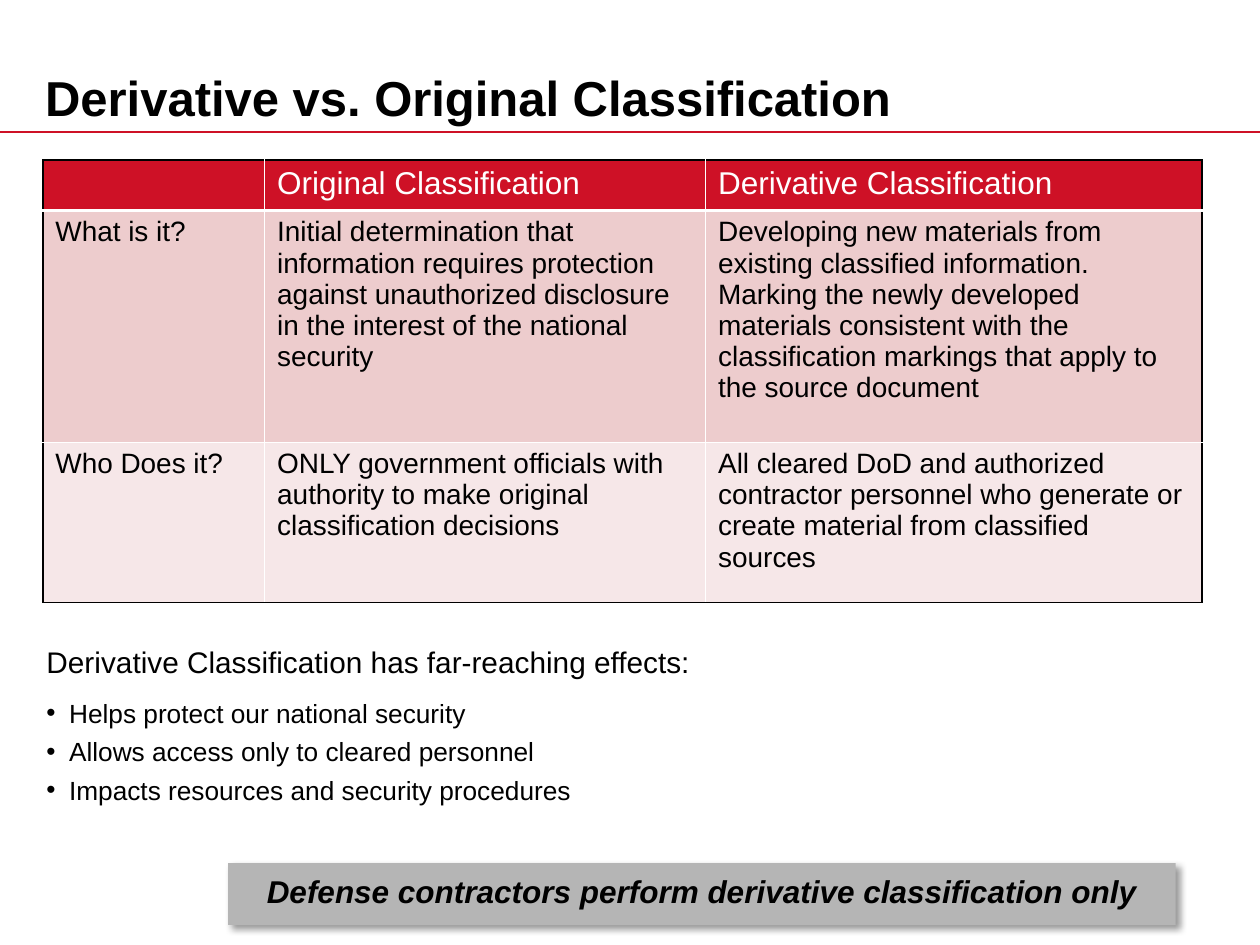
from lxml import etree
from pptx import Presentation
from pptx.dml.color import RGBColor
from pptx.enum.shapes import MSO_CONNECTOR, MSO_SHAPE
from pptx.enum.text import MSO_ANCHOR, PP_ALIGN
from pptx.oxml.ns import qn
from pptx.util import Emu, Inches, Pt

RED, PINK, PALE = "CE1126", "EDCCCD", "F6E7E8"
BLACK, WHITE, GRAY = "000000", "FFFFFF", "B5B5B5"

COLS = (1.76, 3.5, 3.94)
ROWS = (  # height, fill, text size, text colour, cells
    (0.35, RED, 18, WHITE,
     ("", "Original Classification", "Derivative Classification")),
    (1.84, PINK, 16, BLACK,
     ("What is it?",
      "Initial determination that information requires protection against "
      "unauthorized disclosure in the interest of the national security",
      "Developing new materials from existing classified information. "
      "Marking the newly developed materials consistent with the "
      "classification markings that apply to the source document")),
    (1.27, PALE, 16, BLACK,
     ("Who Does it?",
      "ONLY government officials with authority to make original "
      "classification decisions",
      "All cleared DoD and authorized contractor personnel who generate or "
      "create material from classified sources")),
)
EFFECTS = (
    "Helps protect our national security",
    "Allows access only to cleared personnel",
    "Impacts resources and security procedures",
)


def rgb(color):
    return RGBColor.from_string(color)


def box(*lengths):
    return [Inches(n) for n in lengths]


def add_xml(parent, tag, **attrs):
    return etree.SubElement(parent, qn(tag), {k: str(v) for k, v in attrs.items()})


def style(p, size, color=BLACK, bold=False, italic=False):
    f = p.font
    f.name, f.size, f.bold, f.italic = "Arial", Pt(size), bold, italic
    f.color.rgb = rgb(color)


def add_text(s, at, text, size, bold=False, anchor=MSO_ANCHOR.TOP):
    tf = s.shapes.add_textbox(*box(*at)).text_frame
    tf.word_wrap = True
    tf.vertical_anchor = anchor
    p = tf.paragraphs[0]
    p.text = text
    style(p, size, bold=bold)
    return tf


def add_rule(s, width, y):
    line = s.shapes.add_connector(MSO_CONNECTOR.STRAIGHT, 0, Inches(y), width, Inches(y))
    line.line.color.rgb = rgb(RED)
    line.line.width = Pt(1)
    add_xml(line._element.spPr, "a:effectLst")


def add_border(cell, side, color, width):
    ln = add_xml(cell._tc.get_or_add_tcPr(), f"a:ln{side}", w=Pt(width))
    add_xml(add_xml(ln, "a:solidFill"), "a:srgbClr", val=color)


def add_comparison(s, left, top):
    """Table with a black outer frame and white inner lines."""
    height = sum(row[0] for row in ROWS)
    table = s.shapes.add_table(len(ROWS), len(COLS),
                               *box(left, top, sum(COLS), height)).table
    last_row, last_col = len(ROWS) - 1, len(COLS) - 1
    for col, width in zip(table.columns, COLS):
        col.width = Inches(width)
    for i, (height, fill, size, color, texts) in enumerate(ROWS):
        table.rows[i].height = Inches(height)
        for j, text in enumerate(texts):
            cell = table.cell(i, j)
            outer = {"L": j == 0, "R": j == last_col, "T": i == 0, "B": i == last_row}
            for side, is_outer in outer.items():
                thick = (i, side) in ((0, "B"), (1, "T"))
                add_border(cell, side, BLACK if is_outer else WHITE, 2 if thick else 1)
            cell.fill.solid()
            cell.fill.fore_color.rgb = rgb(fill)
            p = cell.text_frame.paragraphs[0]
            p.text = text
            style(p, size, color)


def add_bullet(tf, text, size, before=0):
    p = tf.add_paragraph()
    p.text = text
    pPr = p._p.get_or_add_pPr()
    pPr.set("marL", str(Inches(0.18)))
    pPr.set("indent", str(-Inches(0.18)))
    add_xml(pPr, "a:buFont", typeface="Arial")
    add_xml(pPr, "a:buChar", char="•")
    p.line_spacing = Pt(22)
    p.space_before = Pt(before)
    style(p, size)


def add_banner(s, at, text):
    sp = s.shapes.add_shape(MSO_SHAPE.RECTANGLE, *box(*at))
    sp.shadow.inherit = False
    sp.fill.solid()
    sp.fill.fore_color.rgb = rgb(GRAY)
    sp.line.fill.background()
    effects = sp._element.spPr.find(qn("a:effectLst"))
    shadow = add_xml(effects, "a:outerShdw", blurRad=Pt(4), dist=Pt(3),
                     dir=45 * 60000, algn="tl", rotWithShape=0)
    add_xml(add_xml(shadow, "a:srgbClr", val=BLACK), "a:alpha", val=40000)
    tf = sp.text_frame
    tf.word_wrap = True
    tf.margin_left = tf.margin_right = tf.margin_top = Emu(0)
    tf.margin_bottom = Inches(0.05)
    tf.vertical_anchor = MSO_ANCHOR.MIDDLE
    p = tf.paragraphs[0]
    p.text = text
    p.alignment = PP_ALIGN.CENTER
    style(p, 18, bold=True, italic=True)


def main():
    prs = Presentation()
    prs.slide_width, prs.slide_height = box(10, 7.5)
    s = prs.slides.add_slide(prs.slide_layouts[6])
    add_rule(s, prs.slide_width, 1.05)
    add_text(s, (0.26, 0.3, 7.91, 0.75), "Derivative vs. Original Classification",
             28, bold=True, anchor=MSO_ANCHOR.BOTTOM)
    add_comparison(s, 0.34, 1.27)
    add_banner(s, (1.81, 6.85, 7.52, 0.49),
               "Defense contractors perform derivative classification only")
    tf = add_text(s, (0.27, 5.06, 7.52, 1.67),
                  "Derivative Classification has far-reaching effects:", 17)
    for i, effect in enumerate(EFFECTS):
        add_bullet(tf, effect, 15, before=0 if i else 6)
    prs.save("out.pptx")


if __name__ == "__main__":
    main()
